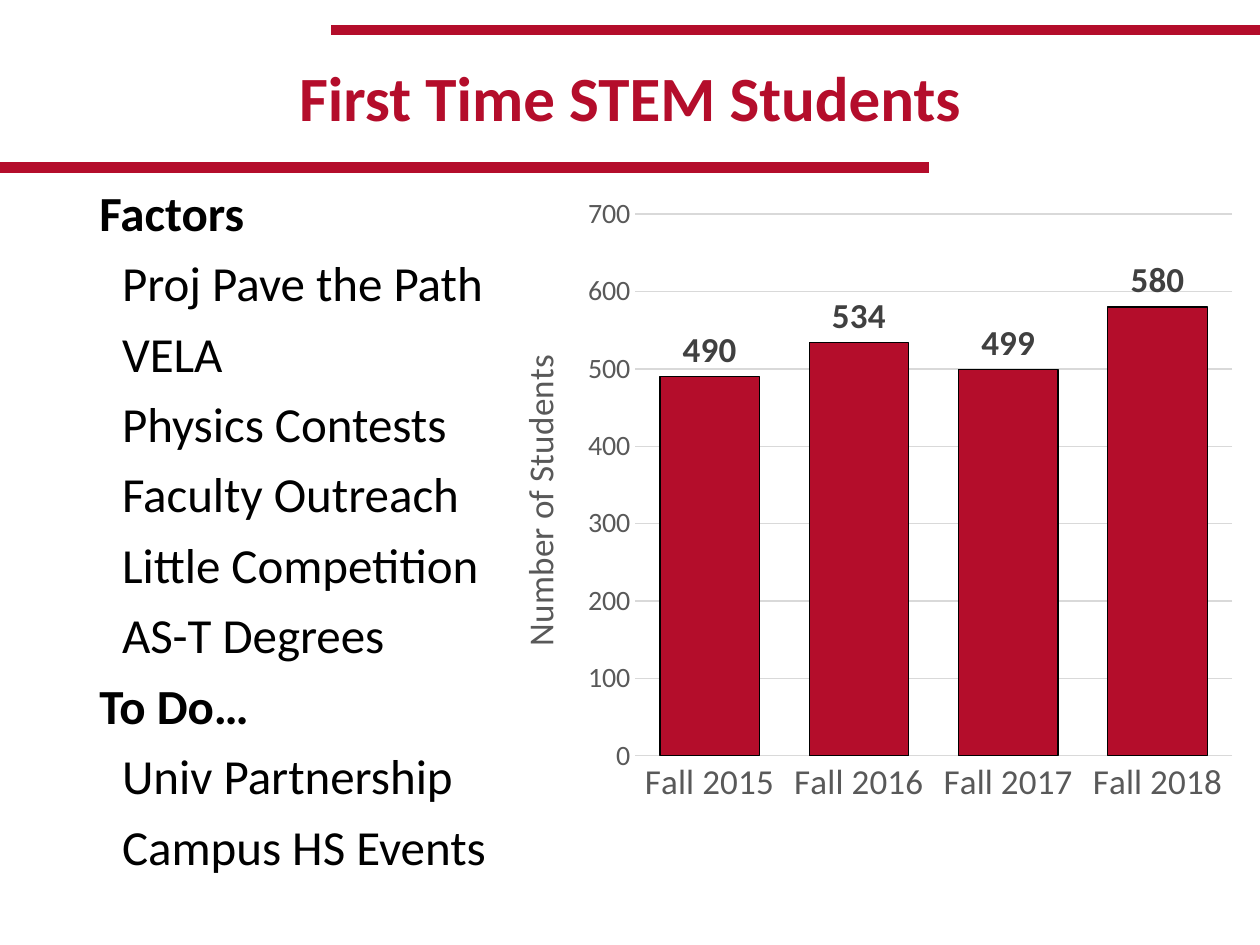
from lxml.etree import SubElement
from pptx import Presentation
from pptx.chart.data import CategoryChartData
from pptx.dml.color import RGBColor
from pptx.enum.chart import XL_CHART_TYPE, XL_LABEL_POSITION, XL_TICK_MARK
from pptx.enum.text import MSO_ANCHOR, PP_ALIGN
from pptx.oxml import parse_xml
from pptx.oxml.ns import nsdecls, qn
from pptx.util import Inches, Pt


class Theme:
    font = "Calibri"
    red = RGBColor.from_string("B40D2B")
    black = RGBColor.from_string("000000")
    gray = RGBColor.from_string("595959")
    dark = RGBColor.from_string("404040")
    pale = RGBColor.from_string("D9D9D9")
    title, body, label, tick = Pt(36), Pt(28), Pt(20), Pt(16)
    bar, hair = Pt(6), Pt(0.75)


def style(font, size, color, bold=False):
    font.name, font.size, font.bold = Theme.font, size, bold
    font.color.rgb = color


def write(para, text, size=Theme.body, color=Theme.black, bold=False,
          align=PP_ALIGN.LEFT, before=0, indent=0):
    para.alignment, para.line_spacing = align, 0.9
    para.space_before = Pt(before)
    if indent:
        para._p.get_or_add_pPr().set("marL", str(Inches(indent)))
    run = para.add_run()
    run.text = text
    style(run.font, size, color, bold)


deck = Presentation()
deck.slide_width, deck.slide_height = Inches(10), Inches(7.5)
slide = deck.slides.add_slide(deck.slide_layouts[6])
shapes = slide.shapes

# Red rules above and below the title
for left, right, top in [(0, 7.37, 1.33), (2.63, 10, 0.24)]:
    rule = shapes.add_connector(1, Inches(left), Inches(top),
                                Inches(right), Inches(top))
    rule.line.color.rgb, rule.line.width = Theme.red, Theme.bar
    SubElement(rule._element.spPr, qn("a:effectLst"))

# Title
title = shapes.add_textbox(Inches(0.69), Inches(0.4),
                           Inches(8.62), Inches(0.81)).text_frame
title.word_wrap, title.vertical_anchor = True, MSO_ANCHOR.MIDDLE
write(title.paragraphs[0], "First Time STEM Students", size=Theme.title,
      color=Theme.red, bold=True, align=PP_ALIGN.CENTER)

# Headed lists
lists = {
    "Factors": ["Proj Pave the Path", "VELA", "Physics Contests",
                "Faculty Outreach", "Little Competition", "AS-T Degrees"],
    "To Do…": ["Univ Partnership", "Campus HS Events"],
}
body = shapes.add_textbox(Inches(0.69), Inches(1.45),
                          Inches(8.62), Inches(5.77)).text_frame
body.word_wrap = True
para = body.paragraphs[0]
for head, items in lists.items():
    write(para, head, bold=True, before=10)
    for item in items:
        write(body.add_paragraph(), item, before=10, indent=0.18)
    if head != list(lists)[-1]:
        para = body.add_paragraph()

# Column chart
data = CategoryChartData()
data.categories = [f"Fall {year}" for year in range(2015, 2019)]
data.add_series("Series 1", [490, 534, 499, 580])
chart = shapes.add_chart(XL_CHART_TYPE.COLUMN_CLUSTERED, Inches(3.9),
                         Inches(1.45), Inches(6), Inches(5), data).chart
chart.has_legend = chart.has_title = False
style(chart.font, Theme.tick, Theme.gray)

plot = chart.plots[0]
plot.gap_width, plot.overlap, plot.vary_by_categories = 50, -6, False
bars = plot.series[0].format
bars.fill.solid()
bars.fill.fore_color.rgb = Theme.red
bars.line.color.rgb, bars.line.width = Theme.black, Theme.hair
plot.has_data_labels = True
labels = plot.data_labels
labels.show_value, labels.position = True, XL_LABEL_POSITION.OUTSIDE_END
style(labels.font, Theme.label, Theme.dark, bold=True)

cats, vals = chart.category_axis, chart.value_axis
for axis, size in [(cats, Theme.label), (vals, Theme.tick)]:
    axis.major_tick_mark = axis.minor_tick_mark = XL_TICK_MARK.NONE
    style(axis.tick_labels.font, size, Theme.gray)
vals.minimum_scale, vals.maximum_scale, vals.major_unit = 0, 700, 100
vals.format.line.fill.background()
for line in (cats.format.line, vals.major_gridlines.format.line):
    line.color.rgb, line.width = Theme.pale, Theme.hair
name = vals.axis_title.text_frame
name.text = "Number of Students"
style(name.paragraphs[0].runs[0].font, Theme.label, Theme.gray)

# Fixed inner plot area, as fractions of the chart
frame = {"x": 0.19, "y": 0.05, "w": 0.79, "h": 0.86}
area = chart._chartSpace.chart.plotArea
for old in area.findall(qn("c:layout")):
    area.remove(old)
layout = parse_xml(f"<c:layout {nsdecls('c')}/>")
manual = SubElement(layout, qn("c:manualLayout"))
settings = {"layoutTarget": "inner", "xMode": "edge", "yMode": "edge", **frame}
for tag, value in settings.items():
    SubElement(manual, qn(f"c:{tag}")).set("val", str(value))
area.insert(0, layout)

deck.save("out.pptx")
